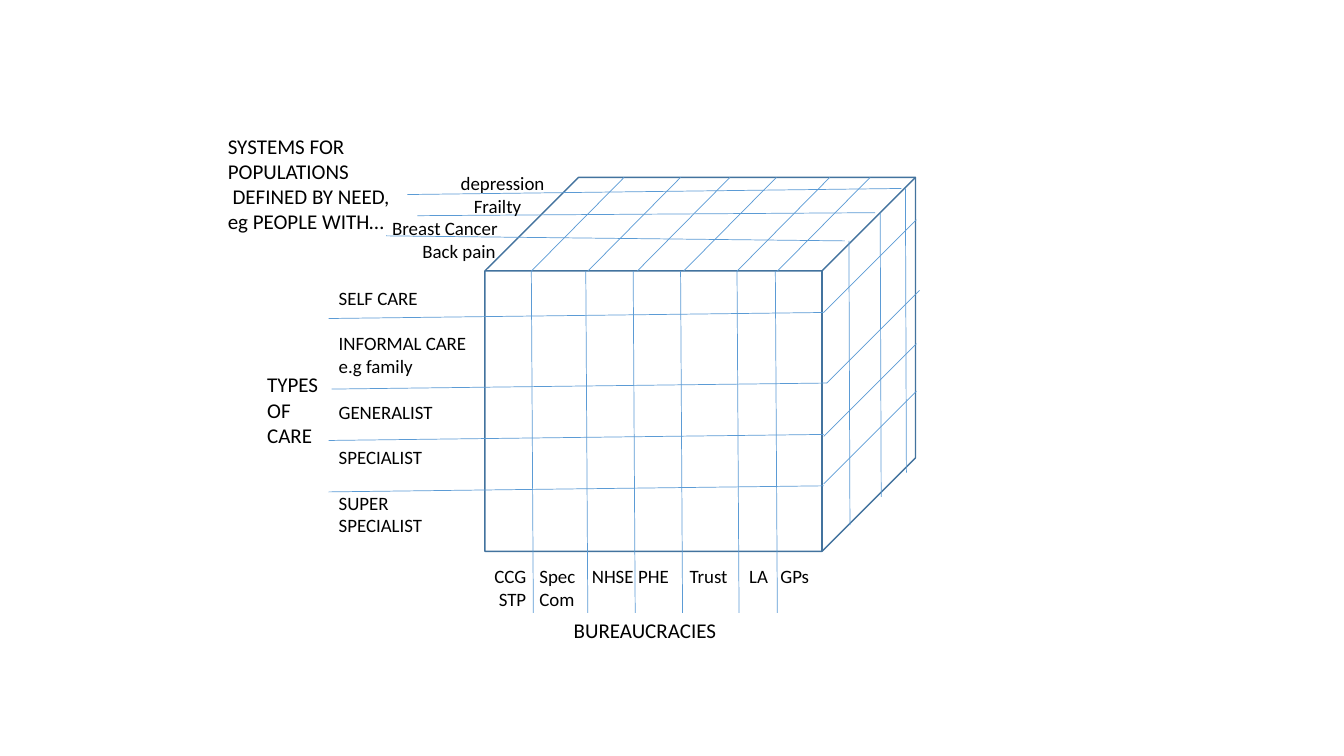
from lxml.etree import SubElement as Sub
from pptx import Presentation as Deck
from pptx.dml.color import RGBColor as Rgb
from pptx.enum.shapes import MSO_CONNECTOR as Link, MSO_SHAPE as Form
from pptx.enum.text import PP_ALIGN as Align
from pptx.oxml.ns import qn
from pptx.util import Inches, Pt

HUES = {"edge": "43739E", "grid": "5B9BD5", "text": "000000"}
FONT = "Calibri"
COLS, ROWS = 133.3, 75
UNIT = Inches(0.1)
SMALL, LARGE = 13.5, 15
LINE = 2.27

LEFT, TOP, WIDE, HIGH = 48.1, 17.6, 42.7, 37.1
DEPTH = 9.2
SIDE = 81.7

UNITS = [
    (52.8, 52.7), (58.2, 58.3), (62.9, 63.2),
    (67.6, 67.8), (73.2, 73.1), (77, 77.1),
]
TYPES = [(SIDE, 31, 31), (82, 38, 38), (SIDE, 43.1, 43.3), (SIDE, 48.2, 48)]
NEEDS = [
    (40.4, 19.3, 89.4, 18.7, 89.8),
    (41.4, 21.4, 86.8, 21.1, 87.3),
    (38.3, 23.4, 83.8, 23.9, 84.2),
]
PEOPLE = [
    (45.7, "depression"), (47, "Frailty"),
    (38.9, "Breast Cancer"), (41.9, "Back pain"),
]
BODIES = [
    (53.5, "Spec\nCom"), (58.7, "NHSE"), (63.3, "PHE"),
    (68.4, "Trust"), (74.3, "LA"), (77.4, "GPs"),
]
CARE = [
    "SELF CARE", "INFORMAL CARE\ve.g family", "GENERALIST",
    "SPECIALIST", "SUPER\vSPECIALIST",
]


def grid(*spots):
    return [int(spot * UNIT) for spot in spots]


def rule(slide, *ends):
    line = slide.shapes.add_connector(Link.STRAIGHT, *grid(*ends))
    line.line.color.rgb = Rgb.from_string(HUES["grid"])
    line.line.width = Pt(0.5)
    Sub(line._element.spPr, qn("a:effectLst"))


def label(slide, x, y, wide, text, size=SMALL, gap=0, align=Align.LEFT, wrap=False):
    count = text.count("\n") + text.count("\v") + 1
    high = count * size / 6
    box = slide.shapes.add_textbox(*grid(x, y, wide, high))
    frame = box.text_frame
    frame.margin_left = frame.margin_right = 0
    frame.margin_top = frame.margin_bottom = 0
    frame.word_wrap = wrap
    frame.text = text
    for order, para in enumerate(frame.paragraphs):
        para.alignment = align
        para.space_before = Pt(gap if order else 0)
        for run in para.runs:
            run.font.name = FONT
            run.font.size = Pt(size)
            run.font.color.rgb = Rgb.from_string(HUES["text"])


def cube(slide):
    block = slide.shapes.add_shape(Form.CUBE, *grid(LEFT, TOP, WIDE, HIGH))
    block.shadow.inherit = False
    block.fill.background()
    block.line.color.rgb = Rgb.from_string(HUES["edge"])
    block.line.width = Pt(1)


def mesh(slide):
    for front, lid in UNITS:
        rule(slide, front + 0.1, 60.8, front - 0.1, 26.9)
        rule(slide, lid + DEPTH, TOP, lid, 26.9)
    for x, front, side in TYPES:
        rule(slide, x - 49.1, front + 0.6, x, front)
        rule(slide, x, side, x + DEPTH, side - DEPTH)
    for x, y, end, rise, side in NEEDS:
        rule(slide, x, y, end, rise)
        rule(slide, side + 0.1, rise + 28.2, side, rise)


def words(slide):
    label(slide, 22.6, 13.2, 19.3,
          "SYSTEMS FOR POPULATIONS\n DEFINED BY NEED,\neg PEOPLE WITH…",
          LARGE, wrap=True)
    label(slide, 26.5, 36.9, 6, "TYPES\nOF\nCARE", LARGE)
    label(slide, 56.9, 61.3, 15, "BUREAUCRACIES", LARGE)
    label(slide, 33.6, 28.4, 15, "\n".join(CARE), gap=16.4)
    for row, (x, need) in enumerate(PEOPLE):
        label(slide, x, 17 + row * LINE, 12, need)
    label(slide, 48.2, 56, 4, "CCG\nSTP", align=Align.RIGHT)
    for x, body in BODIES:
        label(slide, x, 56, 4.5, body)


def main():
    deck = Deck()
    deck.slide_width, deck.slide_height = grid(COLS, ROWS)
    slide = deck.slides.add_slide(deck.slide_layouts[6])
    cube(slide)
    mesh(slide)
    words(slide)
    deck.save("out.pptx")


if __name__ == "__main__":
    main()
